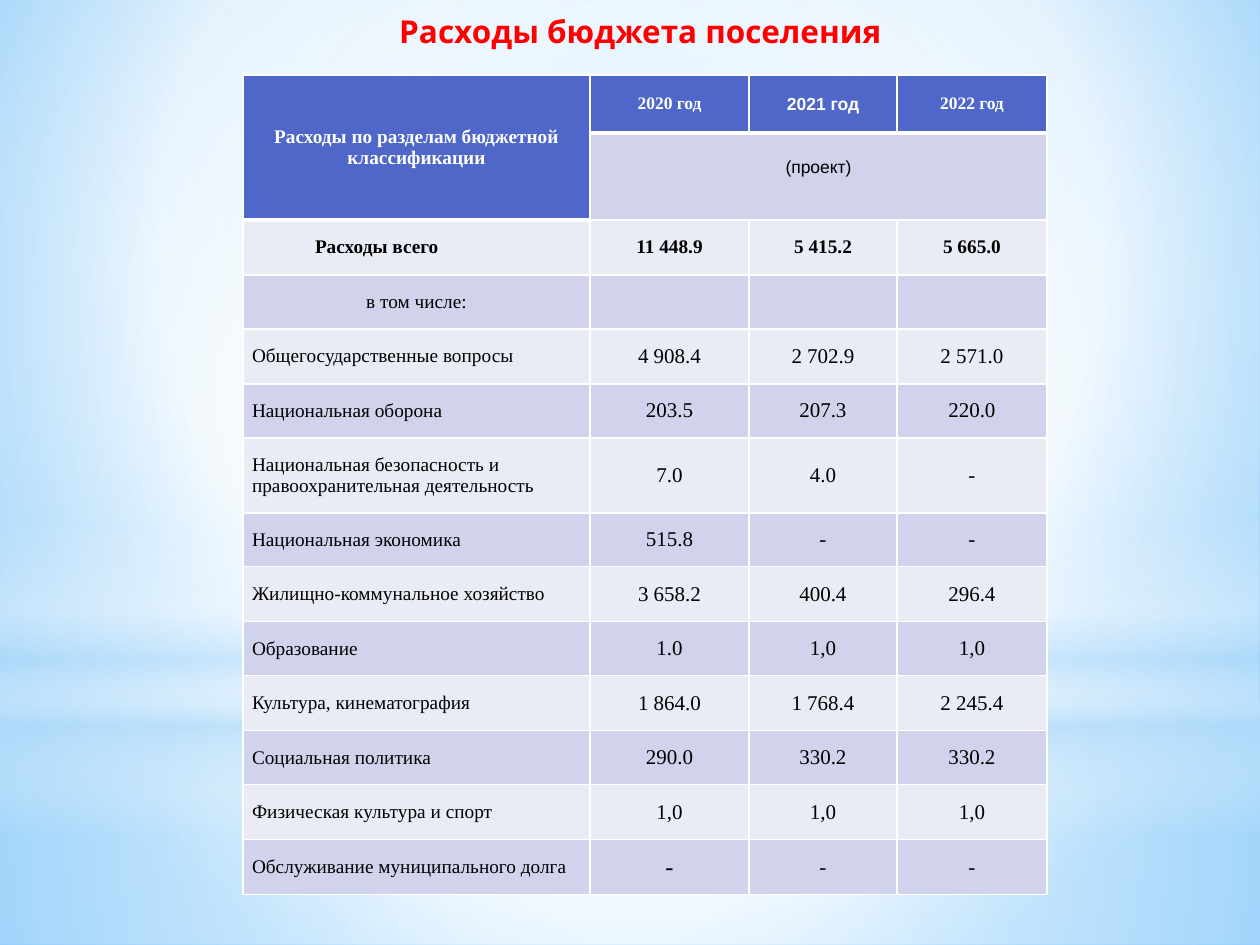
from itertools import pairwise

from pptx import Presentation
from pptx.dml.color import RGBColor
from pptx.enum.shapes import MSO_SHAPE
from pptx.enum.text import MSO_ANCHOR, MSO_AUTO_SIZE, PP_ALIGN
from pptx.oxml import parse_xml
from pptx.oxml.ns import nsdecls
from pptx.util import Pt

SCALE = 914400 / 126
SERIF, SANS = "Times New Roman", "Arial"
COLUMN_EDGES = [243, 590, 749, 897, 1047]
ROW_EDGES = [75, 133, 220, 275, 329, 384, 438, 513, 567, 622, 676, 731, 785, 840, 895]
YEARS = [("2020 год", SERIF), ("2021 год", SANS), ("2022 год", SERIF)]
EXPENSES = [
    ("Расходы всего", "11 448.9", "5 415.2", "5 665.0"),
    ("в том числе:", "", "", ""),
    ("Общегосударственные вопросы", "4 908.4", "2 702.9", "2 571.0"),
    ("Национальная оборона", "203.5", "207.3", "220.0"),
    ("Национальная безопасность и правоохранительная деятельность", "7.0", "4.0", "-"),
    ("Национальная экономика", "515.8", "-", "-"),
    ("Жилищно-коммунальное хозяйство", "3 658.2", "400.4", "296.4"),
    ("Образование", "1.0", "1,0", "1,0"),
    ("Культура, кинематография", "1 864.0", "1 768.4", "2 245.4"),
    ("Социальная политика", "290.0", "330.2", "330.2"),
    ("Физическая культура и спорт", "1,0", "1,0", "1,0"),
    ("Обслуживание муниципального долга", "-", "-", "-"),
]


def px(length):
    return round(length * SCALE)


def color(value):
    return RGBColor.from_string(value)


class BudgetSlide:
    """Holds the style and the slide being built."""

    header, band, light, white, black = "4E67C8", "D0D3EB", "E9EBF5", "FFFFFF", "000000"

    def __init__(self, presentation):
        self.slide = presentation.slides.add_slide(presentation.slide_layouts[5])

    def gradient(self, element, stops, center=None):
        solid = element.xpath(".//a:solidFill")[0]
        stop_xml = "".join(
            f'<a:gs pos="{position * 1000}"><a:srgbClr val="{value}">'
            f'<a:alpha val="{opacity * 1000}"/></a:srgbClr></a:gs>'
            for position, value, opacity in stops)
        if center:
            sides = " ".join(f'{side}="{value * 1000}"' for side, value in zip("ltrb", center))
            direction = f'<a:path path="circle"><a:fillToRect {sides}/></a:path>'
        else:
            direction = '<a:lin ang="5400000" scaled="0"/>'
        solid.getparent().replace(solid, parse_xml(
            f'<a:gradFill {nsdecls("a")} rotWithShape="1"><a:gsLst>{stop_xml}</a:gsLst>'
            f'{direction}</a:gradFill>'))

    def background(self, stops, center):
        self.slide.background.fill.solid()
        self.slide.background.fill.fore_color.rgb = color(self.white)
        self.gradient(self.slide.element, stops, center)

    def glow(self, kind, top, height, stops, center=None):
        shape = self.slide.shapes.add_shape(kind, 0, px(top), px(1260), px(height))
        shape.shadow.inherit = False
        shape.line.fill.background()
        shape.fill.solid()
        self.gradient(shape.element, stops, center)

    def title(self, text, left, top, width, height):
        title = self.slide.shapes.title
        title.left, title.top, title.width, title.height = map(px, (left, top, width, height))
        frame = title.text_frame
        frame.text = text
        frame.word_wrap, frame.auto_size = True, MSO_AUTO_SIZE.NONE
        frame.vertical_anchor = MSO_ANCHOR.TOP
        self.format(frame.paragraphs[0], 18, "Karla", "FF0000", True)
        title.element.getparent().append(title.element)

    def format(self, paragraph, size, font, value, bold, align=PP_ALIGN.CENTER):
        paragraph.alignment = align
        paragraph.font.size, paragraph.font.name = Pt(size), font
        paragraph.font.bold, paragraph.font.color.rgb = bold, color(value)

    def table(self, columns, rows):
        table = self.slide.shapes.add_table(
            len(rows) - 1, len(columns) - 1, px(columns[0]), px(rows[0]),
            px(columns[-1] - columns[0]), px(rows[-1] - rows[0])).table
        table.horz_banding = False
        for column, (start, end) in zip(table.columns, pairwise(columns)):
            column.width = px(end - start)
        for row, (start, end) in zip(table.rows, pairwise(rows)):
            row.height = px(end - start)
        for index, row in enumerate(table.rows):
            for cell in row.cells:
                self.cell_style(cell, self.band if index % 2 else self.light)
        for column in range(len(columns) - 1):
            self.cell_style(table.cell(0, column), self.header, 3)
        self.cell_style(table.cell(1, 0), self.header, 3)
        table.cell(0, 0).merge(table.cell(1, 0))
        table.cell(1, 1).merge(table.cell(1, 3))
        return table

    def cell_style(self, cell, fill, bottom=1):
        cell.fill.solid()
        cell.fill.fore_color.rgb = color(fill)
        cell.vertical_anchor = MSO_ANCHOR.MIDDLE
        cell.margin_left = cell.margin_right = px(9)
        cell.margin_top = cell.margin_bottom = 0
        properties = cell._tc.get_or_add_tcPr()
        for line in properties.xpath("./a:lnL | ./a:lnR | ./a:lnT | ./a:lnB"):
            properties.remove(line)
        for index, (side, width) in enumerate(zip("LRTB", (1, 1, 1, bottom))):
            properties.insert(index, parse_xml(
                f'<a:ln{side} {nsdecls("a")} w="{Pt(width)}"><a:solidFill>'
                f'<a:srgbClr val="{self.white}"/></a:solidFill></a:ln{side}>'))

    def cell_text(self, cell, text, size, font=SERIF, value=black, bold=False,
                  align=PP_ALIGN.CENTER, indent=0):
        cell.text = text
        paragraph = cell.text_frame.paragraphs[0]
        self.format(paragraph, size, font, value, bold, align)
        if indent:
            properties = paragraph._p.get_or_add_pPr()
            properties.set("marL", "0")
            properties.set("indent", str(px(indent)))


def main():
    presentation = Presentation()
    presentation.slide_width, presentation.slide_height = px(1260), px(945)
    budget = BudgetSlide(presentation)
    middle = (50, 50, 50, 50)
    budget.background([(0, "9ED5FF", 100), (60, "FFFFFF", 100), (100, "5BB9FF", 100)],
                      (20, 10, 20, 60))
    budget.glow(MSO_SHAPE.RECTANGLE, 703, 242,
                [(0, "FFFFFF", 91), (37, "FFFFFF", 76), (100, "B4DCFA", 79)], middle)
    budget.glow(MSO_SHAPE.RECTANGLE, 0, 703,
                [(0, "FFFFFF", 89), (48, "FFFFFF", 62), (100, "B4DCFA", 79)], middle)
    budget.glow(MSO_SHAPE.RECTANGLE, 519, 315,
                [(0, "FFFFFF", 0), (29, "FFFFFF", 30), (45, "B4DCFA", 40),
                 (55, "FFFFFF", 26), (65, "B4DCFA", 60), (100, "FFFFFF", 0)])
    budget.glow(MSO_SHAPE.OVAL, 220, 703, [(0, "FFFFFF", 100), (56, "FFFFFF", 0)], middle)
    budget.title("Расходы бюджета поселения", 42, 6, 1197, 69)

    table = budget.table(COLUMN_EDGES, ROW_EDGES)
    budget.cell_text(table.cell(0, 0), "Расходы по разделам бюджетной классификации", 11,
                     value=budget.white, bold=True)
    for column, (year, font) in enumerate(YEARS, 1):
        budget.cell_text(table.cell(0, column), year, 10, font, budget.white, True)
    budget.cell_text(table.cell(1, 1), "(проект)", 10, SANS)
    table.cell(1, 1).margin_bottom = px(18)

    last = len(EXPENSES) - 1
    for index, (name, *amounts) in enumerate(EXPENSES):
        total = index == 0
        budget.cell_text(table.cell(index + 2, 0), name, 11, bold=total,
                         align=PP_ALIGN.CENTER if index == 1 else PP_ALIGN.LEFT,
                         indent=63 if total else 0)
        for column, amount in enumerate(amounts, 1):
            if amount:
                size = 11 if total else 14 if (index, column) == (last, 1) else 12
                budget.cell_text(table.cell(index + 2, column), amount, size, bold=total)
    presentation.save("out.pptx")


if __name__ == "__main__":
    main()
